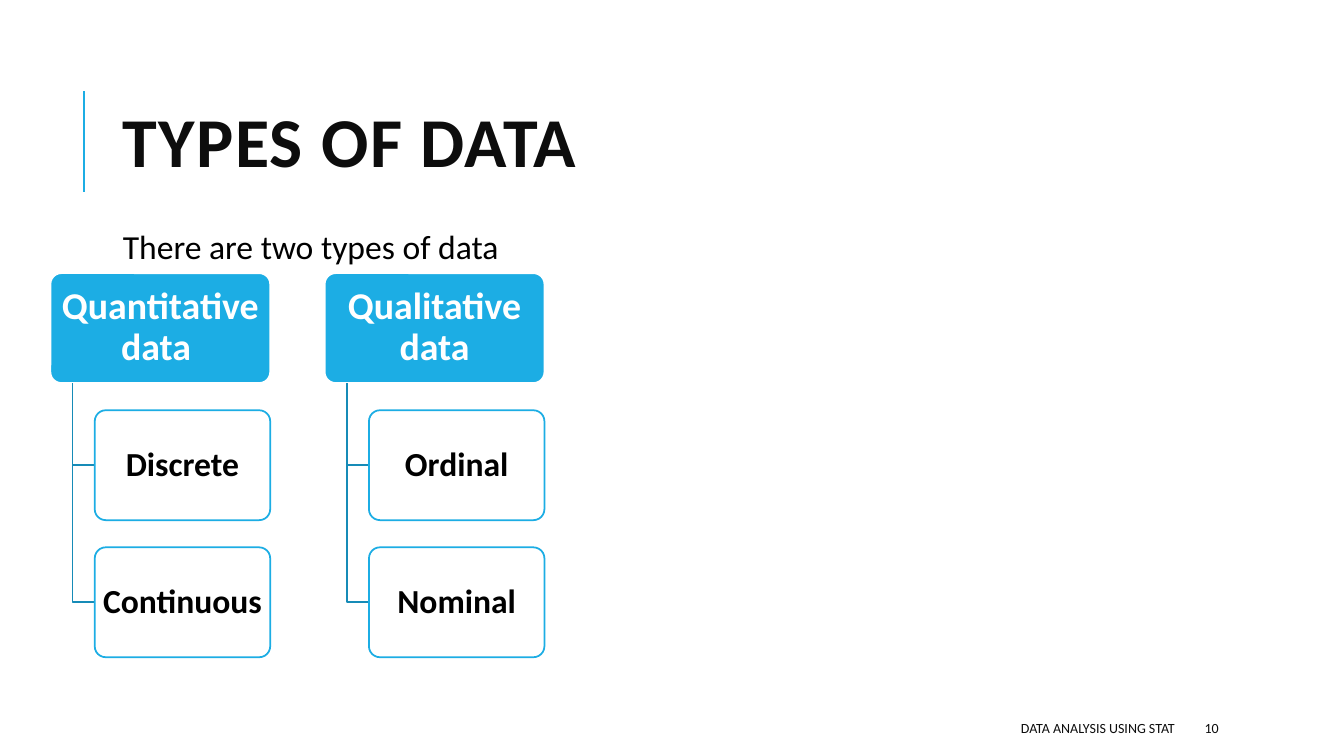
from dataclasses import dataclass

from lxml.etree import SubElement
from pptx import Presentation
from pptx.dml.color import RGBColor
from pptx.enum.shapes import MSO_CONNECTOR, MSO_SHAPE
from pptx.enum.text import MSO_ANCHOR, PP_ALIGN
from pptx.oxml.ns import qn
from pptx.util import Inches, Pt


@dataclass(frozen=True)
class Theme:
    font: str = "Calibri"
    accent: str = "1CADE4"
    branch: str = "168BB7"
    white: str = "FFFFFF"
    black: str = "000000"
    ink: str = "0D0D0D"
    title: int = 50
    heading: int = 27
    body: int = 24
    footer: int = 10
    line: float = 1.25
    rule: float = 1.5


def write_text(frame, text, *, theme, size, color, bold=False, align=PP_ALIGN.LEFT,
               anchor=MSO_ANCHOR.MIDDLE, line_spacing=1.0, tracking=0,
               insets=(0.1, 0.05)):
    frame.word_wrap = True
    frame.vertical_anchor = anchor
    frame.margin_left = frame.margin_right = Inches(insets[0])
    frame.margin_top = frame.margin_bottom = Inches(insets[1])
    para = frame.paragraphs[0]
    para.alignment = align
    para.line_spacing = line_spacing
    span = para.add_run()
    span.text = text
    span.font.name = theme.font
    span.font.size = Pt(size)
    span.font.bold = bold
    span.font.color.rgb = RGBColor.from_string(color)
    if tracking:
        span.font._element.set("spc", str(int(tracking * 100)))


class PageBuilder:
    def __init__(self, page, theme):
        self.page = page
        self.theme = theme

    def set_line(self, item, color, width):
        item.line.color.rgb = RGBColor.from_string(color)
        item.line.width = Pt(width)

    def label(self, text, left, top, width, height, **text_format):
        box = self.page.shapes.add_textbox(*map(Inches, (left, top, width, height)))
        write_text(box.text_frame, text, theme=self.theme, **text_format)

    def rule(self, left, top, bottom):
        line = self.page.shapes.add_connector(
            MSO_CONNECTOR.STRAIGHT, *map(Inches, (left, bottom, left, top)))
        self.set_line(line, self.theme.accent, self.theme.rule)
        SubElement(line._element.spPr, qn("a:effectLst"))

    def card(self, text, left, top, width, height, *, fill, outline, opacity=100,
             **text_format):
        box = self.page.shapes.add_shape(
            MSO_SHAPE.ROUNDED_RECTANGLE, *map(Inches, (left, top, width, height)))
        box.adjustments[0] = 0.1
        box.shadow.inherit = False
        box.fill.solid()
        box.fill.fore_color.rgb = RGBColor.from_string(fill)
        if opacity < 100:
            color = box._element.spPr.find(qn("a:solidFill"))[0]
            SubElement(color, qn("a:alpha")).set("val", str(opacity * 1000))
        self.set_line(box, outline, self.theme.line)
        # The rounded corners add to these insets
        write_text(box.text_frame, text, theme=self.theme, bold=True,
                   align=PP_ALIGN.CENTER, line_spacing=0.9, insets=(0.03, 0.03),
                   **text_format)

    def elbow(self, left, top, right, bottom):
        left, top, right, bottom = map(Inches, (left, top, right, bottom))
        builder = self.page.shapes.build_freeform(left, top)
        builder.add_line_segments([(left, bottom), (right, bottom)], close=False)
        branch = builder.convert_to_shape()
        branch.shadow.inherit = False
        branch.fill.background()
        self.set_line(branch, self.theme.branch, self.theme.line)

    def tree(self, heading, kinds, left):
        theme = self.theme
        top, height, pitch = 2.71, 1.09, 1.36
        trunk, child_left = left + 0.22, left + 0.44
        self.card(heading, left, top, 2.18, height, fill=theme.accent,
                  outline=theme.white, size=theme.heading, color=theme.white)
        for level, kind in enumerate(kinds, start=1):
            child_top = top + level * pitch
            self.elbow(trunk, top + height, child_left, child_top + height / 2)
            self.card(kind, child_left, child_top, 1.74, height, fill=theme.white,
                      outline=theme.accent, opacity=90, size=theme.body,
                      color=theme.black)


def main():
    theme = Theme()
    deck = Presentation()
    deck.slide_width, deck.slide_height = Inches(13.33), Inches(7.5)
    builder = PageBuilder(deck.slides.add_slide(deck.slide_layouts[6]), theme)

    # Title and introduction
    builder.rule(0.83, 0.9, 1.9)
    builder.label("TYPES OF DATA", 1.12, 0.64, 10.63, 1.64, size=theme.title,
                  color=theme.ink, bold=True, line_spacing=0.8, tracking=1)
    builder.label("There are two types of data", 1.12, 2.19, 4.18, 0.5,
                  size=theme.body, color=theme.black, anchor=MSO_ANCHOR.TOP)

    # Two trees of data types
    trees = {"Quantitative data ": ("Discrete", "Continuous"),
             "Qualitative data": ("Ordinal", "Nominal")}
    for column, (heading, kinds) in enumerate(trees.items()):
        builder.tree(heading, kinds, 0.5 + column * 2.72)

    # Footer and page number
    builder.label("DATA ANALYSIS USING STAT", 5.3, 7.07, 6.45, 0.3,
                  size=theme.footer, color=theme.ink, align=PP_ALIGN.RIGHT)
    builder.label("10", 11.85, 7.07, 1.06, 0.3, size=theme.footer, color=theme.ink)

    deck.save("out.pptx")


if __name__ == "__main__":
    main()
